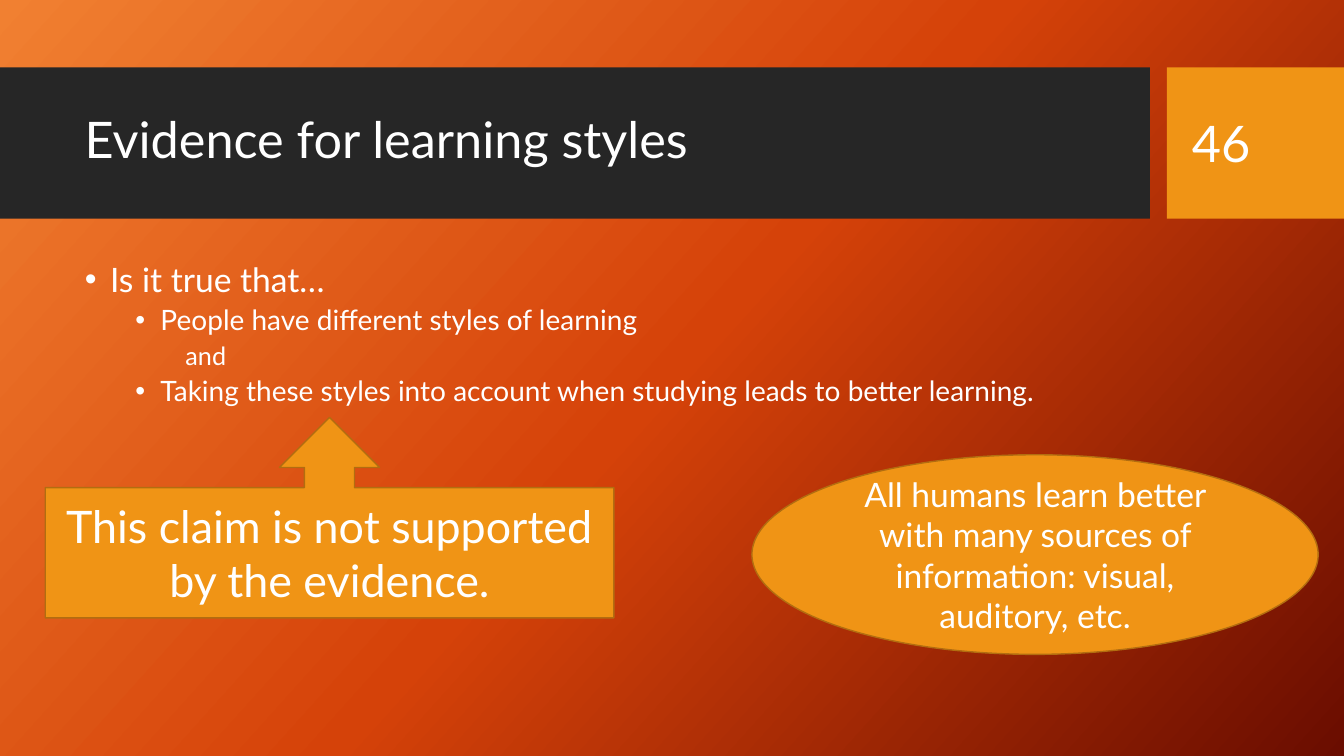
from dataclasses import dataclass
from copy import deepcopy
from typing import Optional

from lxml.etree import SubElement
from pptx import Presentation
from pptx.dml.color import RGBColor
from pptx.enum.shapes import MSO_SHAPE
from pptx.enum.text import MSO_ANCHOR, MSO_AUTO_SIZE, PP_ALIGN
from pptx.oxml.ns import qn
from pptx.shapes.autoshape import Shape
from pptx.slide import Slide
from pptx.text.text import TextFrame
from pptx.util import Cm, Pt


@dataclass(frozen=True)
class Theme:
    font: str = "Lato"
    text: str = "FFFFFF"
    band: str = "262626"
    accent: str = "F09415"
    outline: str = "B26D10"
    gradient: tuple = ((0, "F18031"), (0.5, "D54209"), (1, "6A0D00"))
    gradient_angle: float = 318
    heading_size: int = 36
    claim_size: int = 32
    level_sizes: tuple = (24, 20, 18)


@dataclass(frozen=True)
class Box:
    left: float
    top: float
    width: float
    height: float

    def lengths(self) -> tuple:
        return Cm(self.left), Cm(self.top), Cm(self.width), Cm(self.height)


@dataclass(frozen=True)
class Panel:
    preset: MSO_SHAPE
    box: Box
    fill: str
    outline: Optional[str] = None
    text: str = ""
    size: int = 24


@dataclass(frozen=True)
class Point:
    text: str
    level: int
    margin: float
    bulleted: bool = True


THEME = Theme()
TITLE_BOX = Box(1.88, 2.08, 26.7, 3)
BODY_BOX = Box(1.88, 6.5, 26.7, 10.01)
NUMBER_BOX = Box(29.79, 2.08, 3.2, 3.02)
BULLET_HANG = 0.635

BANDS = (
    Panel(MSO_SHAPE.RECTANGLE, Box(0, 1.7, 28.98, 3.81), THEME.band),
    Panel(MSO_SHAPE.RECTANGLE, Box(29.41, 1.7, 4.46, 3.81), THEME.accent),
)
CALLOUTS = (
    Panel(MSO_SHAPE.UP_ARROW_CALLOUT, Box(1.14, 10.52, 14.33, 5.05), THEME.accent, THEME.outline,
          "This claim is not supported by the evidence.", THEME.claim_size),
    Panel(MSO_SHAPE.OVAL, Box(18.95, 11.46, 14.27, 5.03), THEME.accent, THEME.outline,
          "All humans learn better with many sources of information: visual, auditory, etc."),
)
POINTS = (
    Point("Is it true that…", 0, 0.64),
    Point("People have different styles of learning", 1, 1.91),
    Point("and", 2, 2.54, bulleted=False),
    Point("Taking these styles into account when studying leads to better learning.", 1, 1.91),
)


def paint_background(slide: Slide) -> None:
    fill = slide.background.fill
    fill.gradient()
    fill.gradient_angle = THEME.gradient_angle
    stop_list = next(slide.element.iter(qn("a:gsLst")))
    stop_list.append(deepcopy(stop_list[-1]))
    for stop, (position, color) in zip(fill.gradient_stops, THEME.gradient):
        stop.position = position
        stop.color.rgb = RGBColor.from_string(color)


def write_text(frame: TextFrame, text: str, size: int, alignment: PP_ALIGN) -> None:
    frame.text = text
    frame.word_wrap = True
    frame.auto_size = MSO_AUTO_SIZE.NONE
    frame.vertical_anchor = MSO_ANCHOR.MIDDLE
    paragraph = frame.paragraphs[0]
    paragraph.alignment = alignment
    format_font(paragraph.runs[0].font, size)


def format_font(font, size: int) -> None:
    font.name = THEME.font
    font.size = Pt(size)
    font.color.rgb = RGBColor.from_string(THEME.text)


def place(shape: Shape, box: Box) -> None:
    shape.left, shape.top, shape.width, shape.height = box.lengths()


def draw_panel(slide: Slide, panel: Panel) -> Shape:
    shape = slide.shapes.add_shape(panel.preset, *panel.box.lengths())
    shape.shadow.inherit = False
    shape.fill.solid()
    shape.fill.fore_color.rgb = RGBColor.from_string(panel.fill)
    if panel.outline:
        shape.line.color.rgb = RGBColor.from_string(panel.outline)
        shape.line.width = Pt(1)
    else:
        shape.line.fill.background()
    if panel.text:
        write_text(shape.text_frame, panel.text, panel.size, PP_ALIGN.CENTER)
    return shape


def write_points(frame: TextFrame) -> None:
    frame.text = "\n".join(point.text for point in POINTS)
    frame.word_wrap = True
    frame.auto_size = MSO_AUTO_SIZE.NONE
    frame.vertical_anchor = MSO_ANCHOR.TOP
    for index, (paragraph, point) in enumerate(zip(frame.paragraphs, POINTS)):
        paragraph.level = point.level
        properties = paragraph._p.get_or_add_pPr()
        properties.set("marL", str(Cm(point.margin)))
        properties.set("indent", str(-Cm(BULLET_HANG) if point.bulleted else 0))
        if point.bulleted:
            SubElement(properties, qn("a:buChar")).set("char", "•")
        else:
            SubElement(properties, qn("a:buNone"))
        paragraph.line_spacing = 0.9
        paragraph.space_before = Pt(5 if index else 0)
        format_font(paragraph.runs[0].font, THEME.level_sizes[point.level])


def main() -> None:
    presentation = Presentation()
    presentation.slide_width, presentation.slide_height = Cm(33.87), Cm(19.05)
    slide = presentation.slides.add_slide(presentation.slide_layouts[1])
    paint_background(slide)

    title, body = slide.shapes.title, slide.placeholders[1]
    for band in BANDS:
        title._element.addprevious(draw_panel(slide, band)._element)

    place(title, TITLE_BOX)
    write_text(title.text_frame, "Evidence for learning styles", THEME.heading_size, PP_ALIGN.LEFT)
    title.text_frame.paragraphs[0].line_spacing = 0.9
    place(body, BODY_BOX)
    write_points(body.text_frame)

    for callout in CALLOUTS:
        draw_panel(slide, callout)
    number = slide.shapes.add_textbox(*NUMBER_BOX.lengths())
    write_text(number.text_frame, "46", THEME.heading_size, PP_ALIGN.LEFT)

    presentation.save("out.pptx")


if __name__ == "__main__":
    main()
